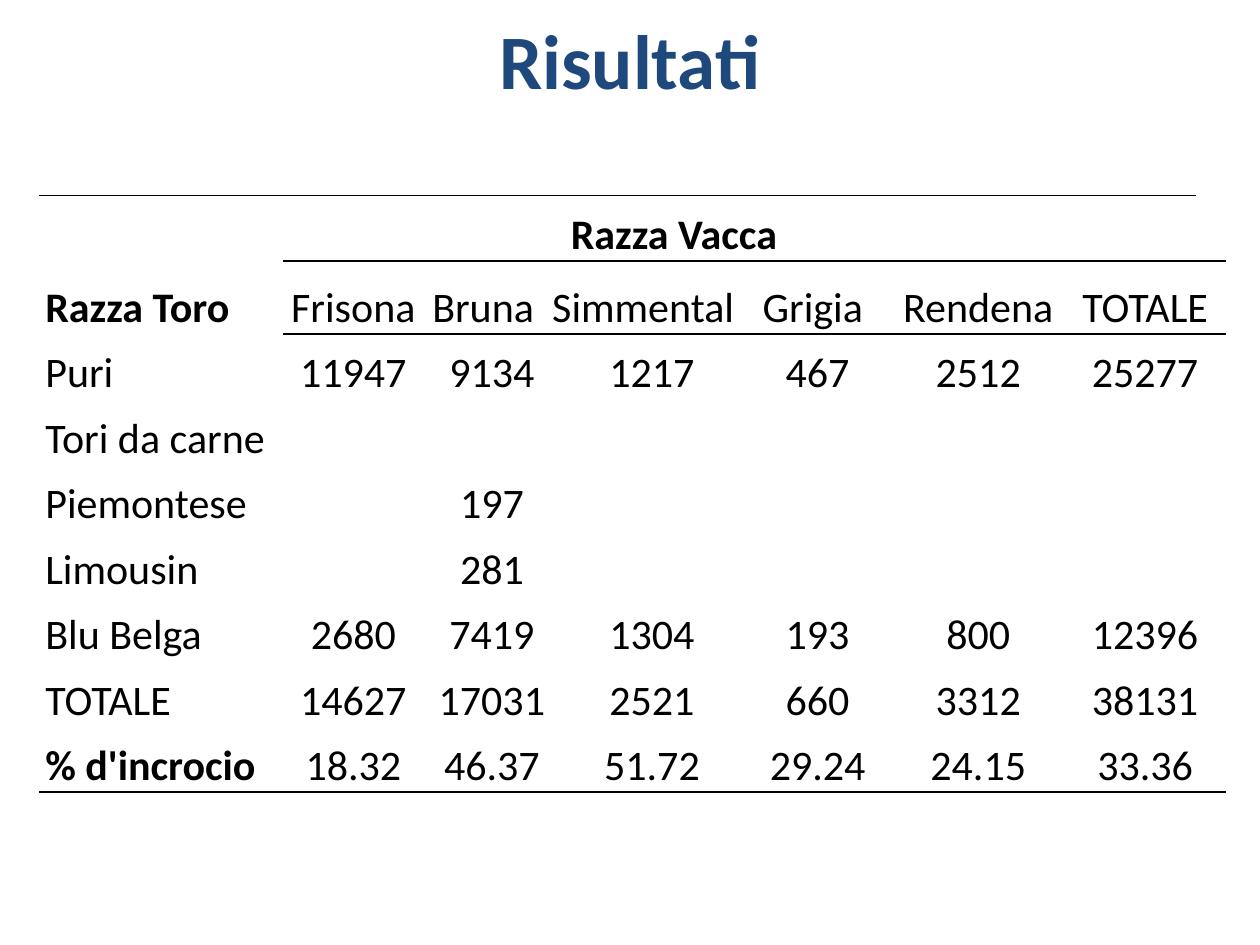
from lxml import etree
from pptx import Presentation
from pptx.dml.color import RGBColor
from pptx.enum.text import MSO_ANCHOR, PP_ALIGN
from pptx.oxml.ns import qn
from pptx.util import Inches, Pt

LEFT, CENTER = PP_ALIGN.LEFT, PP_ALIGN.CENTER
MIDDLE, BOTTOM = MSO_ANCHOR.MIDDLE, MSO_ANCHOR.BOTTOM
FONT = "Calibri"
COLORS = {"title": "1F497D", "text": "000000", "rule": "000000"}
PLAIN_TABLE_STYLE = "{2D5ABB26-0587-4C30-8999-92F81FD0307C}"

TITLE = "Risultati"
GROUP_HEADING = "Razza Vacca"
BREEDS = ["Razza Toro", "Frisona", "Bruna", "Simmental", "Grigia ", "Rendena", "TOTALE"]
RESULTS = [
    ["Puri", "11947", "9134", "1217", "467", "2512", "25277"],
    ["Tori da carne", "", "", "", "", "", ""],
    ["Piemontese", "", "197", "", "", "", ""],
    ["Limousin", "", "281", "", "", "", ""],
    ["Blu Belga", "2680", "7419", "1304", "193", "800", "12396"],
    ["TOTALE", "14627", "17031", "2521", "660", "3312", "38131"],
    ["% d'incrocio", "18.32", "46.37", "51.72", "29.24", "24.15", "33.36"],
]
BOLD = {GROUP_HEADING, BREEDS[0], RESULTS[-1][0]}

COLUMN_WIDTHS = [1.94, 1.11, 0.95, 0.14, 1.45, 1.18, 1.37, 1.04, 0.14]
ROW_HEIGHTS = [0.52, 0.58] + [0.52] * len(RESULTS)
# First and last grid column of each entry in a row
GROUP_SPANS = [(1, 6)]
BREED_SPANS = [(0, 0), (1, 1), (2, 2), (3, 4), (5, 5), (6, 6), (7, 8)]
RESULT_SPANS = [(0, 0), (1, 1), (2, 3), (4, 4), (5, 5), (6, 6), (7, 8)]


def write(frame, text, size, color, align, bold):
    para = frame.paragraphs[0]
    para.alignment = align
    span = para.add_run()
    span.text = text
    span.font.name, span.font.size, span.font.bold = FONT, Pt(size), bold
    span.font.color.rgb = RGBColor.from_string(COLORS[color])
    return para


def add_rule(cell, side):
    """Draw a border on one side of a cell: T for top, B for bottom."""
    line = etree.SubElement(cell._tc.get_or_add_tcPr(), qn(f"a:ln{side}"), w=str(Pt(1)))
    fill = etree.SubElement(line, qn("a:solidFill"))
    etree.SubElement(fill, qn("a:srgbClr"), val=COLORS["rule"])


def fill_row(table, row, texts, spans):
    for text, (first, last) in zip(texts, spans):
        cell = table.cell(row, first)
        if last > first:
            cell.merge(table.cell(row, last))
        if not text:
            continue
        cell.vertical_anchor = BOTTOM
        cell.margin_left = cell.margin_right = Inches(0.05)
        cell.margin_top = cell.margin_bottom = 0
        align = CENTER if first else LEFT
        para = write(cell.text_frame, text, 24, "text", align, text in BOLD)
        para.line_spacing = 1.15


def add_results_table(slide):
    rows, columns = len(ROW_HEIGHTS), len(COLUMN_WIDTHS)
    table = slide.shapes.add_table(
        rows, columns, Inches(0.31), Inches(1.55),
        Inches(sum(COLUMN_WIDTHS)), Inches(sum(ROW_HEIGHTS))).table
    table.first_row = table.horz_banding = False
    table._tbl.tblPr.find(qn("a:tableStyleId")).text = PLAIN_TABLE_STYLE
    for column, width in zip(table.columns, COLUMN_WIDTHS):
        column.width = Inches(width)
    for row, height in zip(table.rows, ROW_HEIGHTS):
        row.height = Inches(height)

    fill_row(table, 0, [GROUP_HEADING], GROUP_SPANS)
    fill_row(table, 1, BREEDS, BREED_SPANS)
    for row, texts in enumerate(RESULTS, start=2):
        fill_row(table, row, texts, RESULT_SPANS)

    rules = [(0, "T", range(columns - 1)), (0, "B", range(1, columns)),
             (1, "T", range(1, columns)), (rows - 1, "B", range(columns))]
    for row, side, ruled_columns in rules:
        for column in ruled_columns:
            add_rule(table.cell(row, column), side)
    for cell in table.iter_cells():
        cell.fill.background()


def main():
    deck = Presentation()
    deck.slide_width, deck.slide_height = Inches(10), Inches(7.5)
    slide = deck.slides.add_slide(deck.slide_layouts[0])
    subtitle = slide.placeholders[1].element
    subtitle.getparent().remove(subtitle)

    title = slide.shapes.title
    title.left, title.top = 0, Inches(0.02)
    title.width, title.height = deck.slide_width, Inches(0.89)
    title.text_frame.vertical_anchor = MIDDLE
    write(title.text_frame, TITLE, 44, "title", CENTER, True)

    add_results_table(slide)
    deck.save("out.pptx")


if __name__ == "__main__":
    main()
